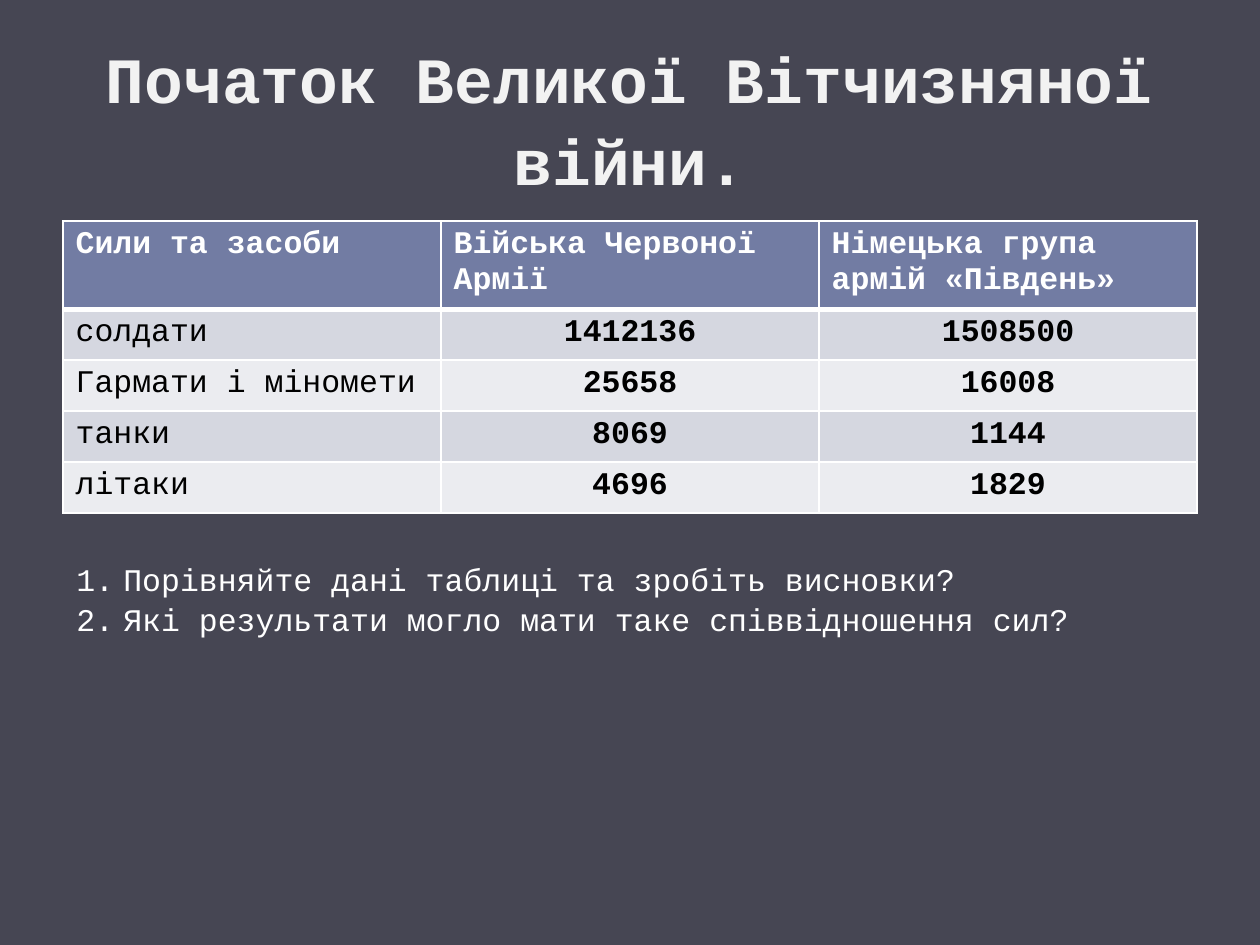
"""Build a slide comparing the forces of two armies, with two questions below the table."""
import pptx
import pptx.dml.color
import pptx.enum.text
import pptx.oxml
import pptx.oxml.ns
import pptx.util
import lxml.etree

PX = 914400 / 126
FONT = "Courier New"
WHITE = "FFFFFF"
ALIGN = pptx.enum.text.PP_ALIGN
qn = pptx.oxml.ns.qn


def color(value):
    return pptx.dml.color.RGBColor.from_string(value)


def write(para, text, size=18, fill=WHITE, bold=False, align=ALIGN.LEFT, spacing=None):
    para.alignment = align
    para.line_spacing = spacing
    span = para.add_run()
    span.text = text
    span.font.name = FONT
    span.font.size = pptx.util.Pt(size)
    span.font.bold = bold
    span.font.color.rgb = color(fill)


deck = pptx.Presentation()
deck.slide_width, deck.slide_height = round(1260 * PX), round(945 * PX)
page = deck.slides.add_slide(deck.slide_layouts[6])
page.background.fill.solid()
page.background.fill.fore_color.rgb = color("464653")

title = page.shapes.add_textbox(*[round(n * PX) for n in (63, 38, 1134, 157)]).text_frame
title.word_wrap = True
title.vertical_anchor = pptx.enum.text.MSO_ANCHOR.MIDDLE
write(title.paragraphs[0], "Початок Великої Вітчизняної війни.", size=36.9,
      fill="F2F2F2", bold=True, align=ALIGN.CENTER, spacing=1.06)

rows = [
    ("Сили та засоби", "Війська Червоної Армії", "Німецька група армій «Південь»"),
    ("солдати", "1412136", "1508500"),
    ("Гармати і міномети", "25658", "16008"),
    ("танки", "8069", "1144"),
    ("літаки", "4696", "1829"),
]
table = page.shapes.add_table(
    len(rows), 3, *[round(n * PX) for n in (63, 221, 1134, 288)]).table
for row_index, texts in enumerate(rows):
    header = row_index == 0
    table.rows[row_index].height = round((84 if header else 51) * PX)
    band = "727CA3" if header else ("EBECF0", "D5D7E0")[row_index % 2]
    for column_index, text in enumerate(texts):
        cell = table.cell(row_index, column_index)
        number = not header and column_index > 0
        write(cell.text_frame.paragraphs[0], text, fill=WHITE if header else "000000",
              bold=header or number, align=ALIGN.CENTER if number else ALIGN.LEFT)
        properties = cell._tc.get_or_add_tcPr()
        for side in ("lnL", "lnR", "lnT", "lnB"):
            thick = (header and side == "lnB") or (row_index == 1 and side == "lnT")
            edge = lxml.etree.SubElement(properties, qn(f"a:{side}"),
                                         w=str(pptx.util.Pt(3 if thick else 1)))
            paint = lxml.etree.SubElement(edge, qn("a:solidFill"))
            lxml.etree.SubElement(paint, qn("a:srgbClr"), val=WHITE)
        cell.fill.solid()
        cell.fill.fore_color.rgb = color(band)

questions = page.shapes.add_textbox(*[round(n * PX) for n in (64, 552, 1131, 89)]).text_frame
questions.word_wrap = True
questions.auto_size = pptx.enum.text.MSO_AUTO_SIZE.SHAPE_TO_FIT_TEXT
for index, text in enumerate((
        "Порівняйте дані таблиці та зробіть висновки?",
        "Які результати могло мати таке співвідношення сил?")):
    para = questions.add_paragraph() if index else questions.paragraphs[0]
    write(para, text, spacing=1.06)
    properties = para._p.get_or_add_pPr()
    properties.set("marL", str(round(47 * PX)))
    properties.set("indent", str(round(-47 * PX)))
    lxml.etree.SubElement(properties, qn("a:buFont"), typeface=FONT)
    lxml.etree.SubElement(properties, qn("a:buAutoNum"), type="arabicPeriod")

deck.save("out.pptx")
